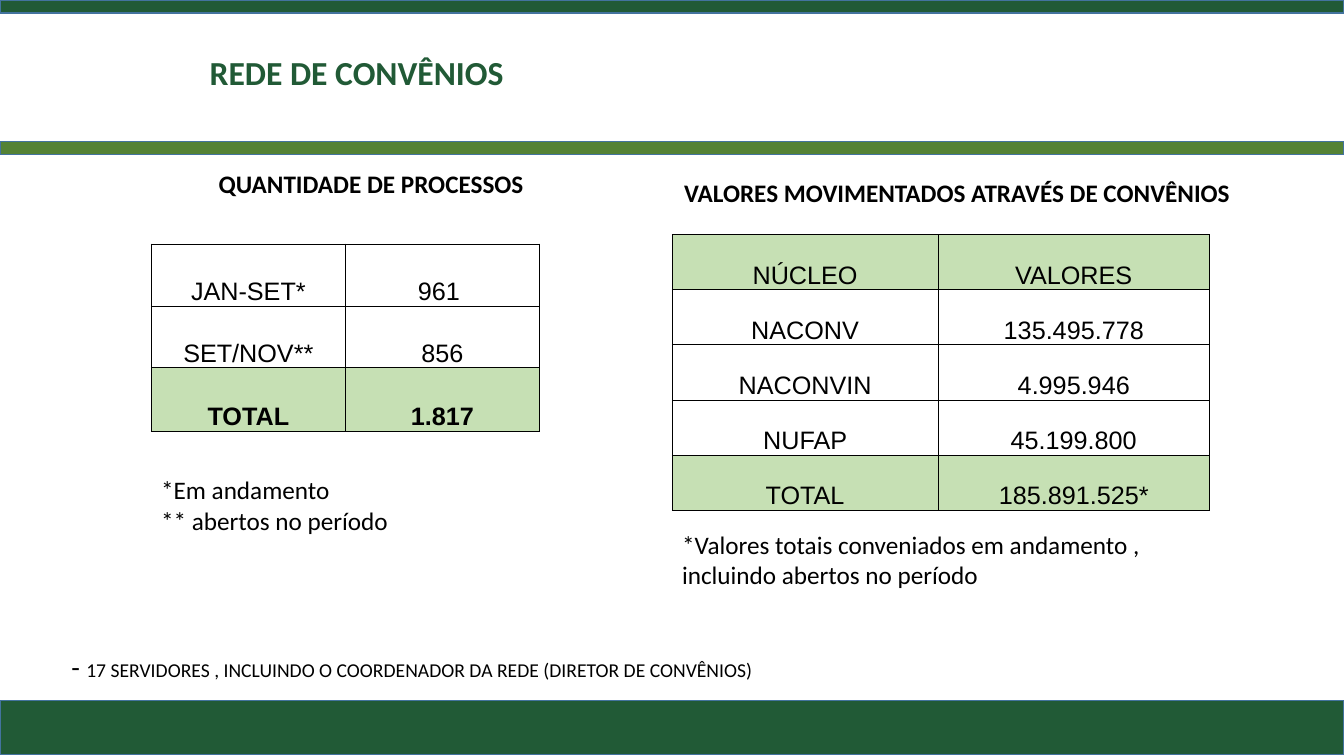
from lxml.etree import SubElement
from pptx import Presentation
from pptx.dml.color import RGBColor
from pptx.enum.shapes import MSO_SHAPE
from pptx.enum.text import MSO_ANCHOR, MSO_AUTO_SIZE, PP_ALIGN
from pptx.oxml.ns import qn
from pptx.util import Cm, Pt

WIDTH, HEIGHT = 33.87, 19.05
DARK_GREEN, GREEN, PALE_GREEN = "215A36", "548235", "C6E0B4"
BAND_LINE, BLACK = "43739E", "000000"


def color(hex_value):
    return RGBColor.from_string(hex_value)


class SlideBuilder:
    def __init__(self, slide):
        self.slide = slide
        self.body = {"name": "Calibri", "size": Pt(18), "bold": False}
        self.heading = {**self.body, "bold": True}
        self.cell = {**self.body, "name": "Arial"}
        self.margins = {"margin_left": Cm(0.03), "margin_right": Cm(0.03),
                        "margin_top": Cm(0.03), "margin_bottom": 0}

    def format_font(self, font, values, hex_value=BLACK):
        for name, value in values.items():
            setattr(font, name, value)
        font.color.rgb = color(hex_value)

    def band(self, top, height, fill):
        shape = self.slide.shapes.add_shape(
            MSO_SHAPE.RECTANGLE, 0, Cm(top), Cm(WIDTH), Cm(height))
        shape.shadow.inherit = False
        shape.fill.solid()
        shape.fill.fore_color.rgb = color(fill)
        shape.line.color.rgb = color(BAND_LINE)
        shape.line.width = Pt(1)

    def title(self, text, left, top, width, height):
        shape = self.slide.shapes.title
        shape.left, shape.top = Cm(left), Cm(top)
        shape.width, shape.height = Cm(width), Cm(height)
        frame = shape.text_frame
        frame.text = text
        frame.vertical_anchor = MSO_ANCHOR.MIDDLE
        paragraph = frame.paragraphs[0]
        paragraph.alignment = PP_ALIGN.LEFT
        paragraph.line_spacing = 0.9
        self.format_font(paragraph.runs[0].font, {**self.heading, "size": Pt(24)}, DARK_GREEN)

    def text(self, paragraphs, left, top, width, height, wrap=False):
        """Add a text box; each paragraph is a list of (text, format) runs."""
        box = self.slide.shapes.add_textbox(Cm(left), Cm(top), Cm(width), Cm(height))
        frame = box.text_frame
        frame.word_wrap = wrap
        frame.auto_size = MSO_AUTO_SIZE.SHAPE_TO_FIT_TEXT
        for index, runs in enumerate(paragraphs):
            paragraph = frame.add_paragraph() if index else frame.paragraphs[0]
            for words, values in runs:
                run = paragraph.add_run()
                run.text = words
                self.format_font(run.font, values)

    def cell_borders(self, cell):
        properties = cell._tc.get_or_add_tcPr()
        for side in ("lnL", "lnR", "lnT", "lnB"):
            line = SubElement(properties, qn(f"a:{side}"), w=str(Pt(0.5)))
            fill = SubElement(line, qn("a:solidFill"))
            SubElement(fill, qn("a:srgbClr"), val=BLACK)

    def table(self, rows, left, top, columns, heights, shaded, bold=()):
        """Add a table; shaded and bold hold row indexes."""
        table = self.slide.shapes.add_table(
            len(rows), len(columns), Cm(left), Cm(top),
            Cm(sum(columns)), Cm(sum(heights))).table
        table.first_row = table.horz_banding = False
        for column, width in zip(table.columns, columns):
            column.width = Cm(width)
        for index, (values, height) in enumerate(zip(rows, heights)):
            table.rows[index].height = Cm(height)
            for cell, value in zip(table.rows[index].cells, values):
                cell.text = value
                cell.vertical_anchor = MSO_ANCHOR.BOTTOM
                for name, margin in self.margins.items():
                    setattr(cell, name, margin)
                self.cell_borders(cell)
                if index in shaded:
                    cell.fill.solid()
                    cell.fill.fore_color.rgb = color(PALE_GREEN)
                else:
                    cell.fill.background()
                paragraph = cell.text_frame.paragraphs[0]
                paragraph.alignment = PP_ALIGN.CENTER
                self.format_font(paragraph.runs[0].font, {**self.cell, "bold": index in bold})


def main():
    presentation = Presentation()
    presentation.slide_width, presentation.slide_height = Cm(WIDTH), Cm(HEIGHT)
    builder = SlideBuilder(presentation.slides.add_slide(presentation.slide_layouts[5]))
    body, heading = builder.body, builder.heading

    builder.band(17.65, 1.37, DARK_GREEN)
    builder.band(3.57, 0.33, GREEN)
    builder.band(0, 0.33, DARK_GREEN)
    builder.title("REDE DE CONVÊNIOS", 5.03, 0.05, 21.87, 3.68)

    builder.text([[("QUANTIDADE DE PROCESSOS", heading)]], 5.26, 4.11, 8.2, 1.02)
    builder.table([("JAN-SET*", "961 "), ("SET/NOV**", "856"), ("TOTAL", "1.817")],
                  3.81, 6.15, (4.9, 4.88), (1.56, 1.55, 1.6), shaded=(2,), bold=(2,))
    builder.text([[("*Em andamento", body)], [("** abertos no período", body)]],
                 3.81, 11.84, 6.3, 1.8)

    builder.text([[("VALORES MOVIMENTADOS ATRAVÉS DE CONVÊNIOS", heading)]],
                 16.99, 4.34, 14.53, 1.02)
    builder.table([("NÚCLEO", "VALORES"), ("NACONV", "135.495.778"),
                   ("NACONVIN", "4.995.946"), ("NUFAP", "45.199.800"),
                   ("TOTAL", "185.891.525*")],
                  16.94, 5.91, (6.7, 6.84), [1.39] * 5, shaded=(0, 4))
    builder.text([[("*Valores totais conveniados em andamento ,", body)],
                  [("incluindo abertos no período", body)]],
                 16.94, 13.21, 13.89, 2.57, wrap=True)

    builder.text([[("- ", {**body, "size": Pt(20)}),
                   ("17 SERVIDORES , INCLUINDO O COORDENADOR DA REDE (DIRETOR DE CONVÊNIOS)",
                    {**body, "size": Pt(14)})]],
                 1.55, 16.23, 18, 1.1, wrap=True)
    presentation.save("out.pptx")


if __name__ == "__main__":
    main()
